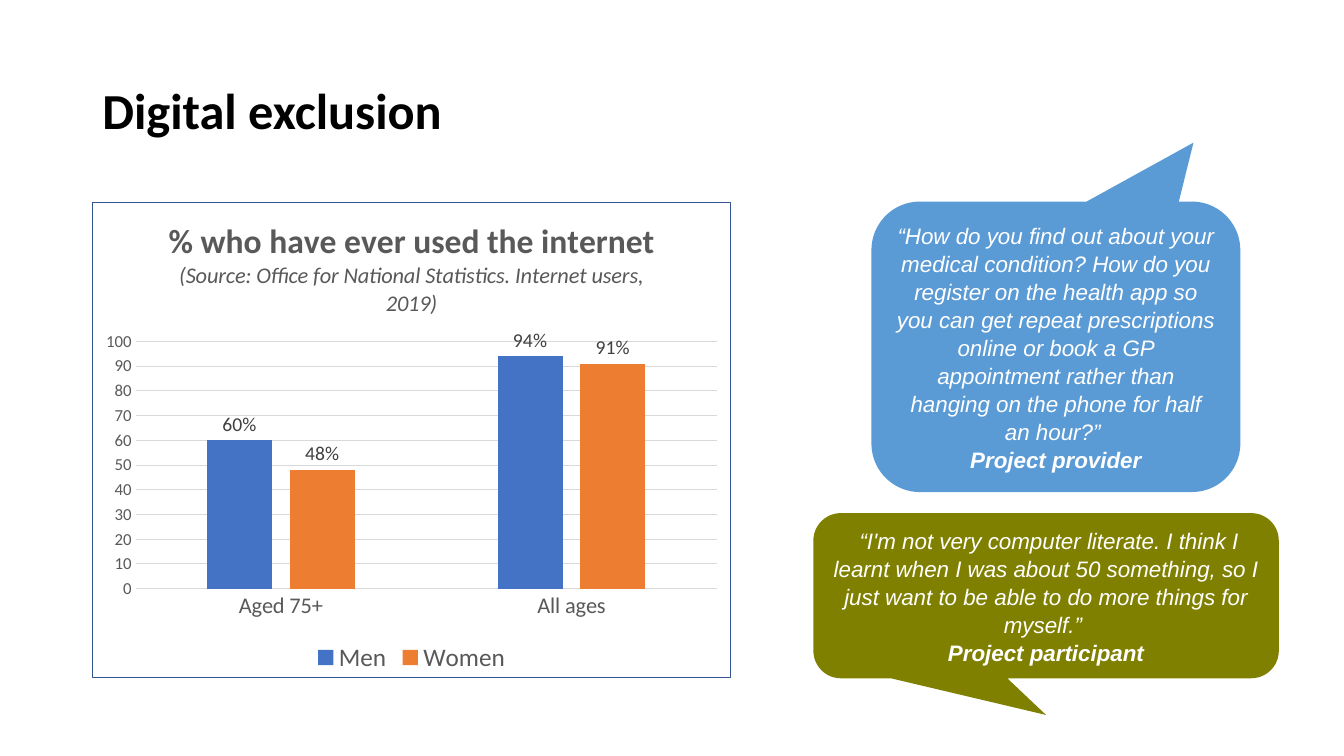
from lxml.etree import SubElement
from pptx import Presentation
from pptx.chart.data import CategoryChartData
from pptx.dml.color import RGBColor
from pptx.enum.chart import XL_CHART_TYPE, XL_LABEL_POSITION, XL_LEGEND_POSITION, XL_TICK_MARK
from pptx.enum.shapes import MSO_SHAPE
from pptx.enum.text import MSO_ANCHOR, PP_ALIGN
from pptx.oxml import parse_xml
from pptx.oxml.ns import nsdecls, qn
from pptx.util import Pt

COLOURS = {
    "ink": "000000", "grey": "595959", "label": "404040", "grid": "D9D9D9",
    "border": "325491", "men": "4472C4", "women": "ED7D31",
    "provider": "5B9BD5", "participant": "808000", "white": "FFFFFF",
}


def colour(name):
    return RGBColor.from_string(COLOURS[name])


def style_font(font, size, tint, face="Calibri", bold=False, italic=False):
    font.name, font.size, font.bold, font.italic = face, Pt(size), bold, italic
    font.color.rgb = colour(tint)


def write(paragraph, text, align=None, spacing=None, **format):
    paragraph.alignment = align
    paragraph.line_spacing = spacing
    run = paragraph.add_run()
    run.text = text
    style_font(run.font, **format)


class ExclusionSlide:
    quote_style = dict(size=16, tint="white", face="Arial', italic=True"[:5], italic=True,
                       align=PP_ALIGN.CENTER, spacing=Pt(20))

    def __init__(self, slide):
        self.shapes = slide.shapes

    def heading(self, text, left, top, width, height):
        frame = self.shapes.add_textbox(Pt(left), Pt(top), Pt(width), Pt(height)).text_frame
        frame.word_wrap = True
        frame.vertical_anchor = MSO_ANCHOR.MIDDLE
        write(frame.paragraphs[0], text, size=36, tint="ink", bold=True, spacing=0.9)

    def quote(self, words, speaker, left, top, width, height, fill, tail):
        bubble = self.shapes.add_shape(MSO_SHAPE.ROUNDED_RECTANGULAR_CALLOUT,
                                       Pt(left), Pt(top), Pt(width), Pt(height))
        bubble.shadow.inherit = False
        bubble.fill.solid()
        bubble.fill.fore_color.rgb = colour(fill)
        bubble.line.fill.background()
        bubble.adjustments[0], bubble.adjustments[1] = tail
        bubble.adjustments[2] = 0.167
        frame = bubble.text_frame
        frame.word_wrap = True
        frame.vertical_anchor = MSO_ANCHOR.MIDDLE
        write(frame.paragraphs[0], words, **self.quote_style)
        write(frame.add_paragraph(), speaker, bold=True, **self.quote_style)

    def usage_chart(self, title, source, ages, usage, left, top, width, height):
        data = CategoryChartData(number_format='0"%"')
        data.categories = ages
        for group, shares in usage.items():
            data.add_series(group, shares)
        chart = self.shapes.add_chart(XL_CHART_TYPE.COLUMN_CLUSTERED, Pt(left), Pt(top),
                                      Pt(width), Pt(height), data).chart
        style_font(chart.font, 10, "ink")
        heading = chart.chart_title.text_frame
        write(heading.paragraphs[0], title, size=24, tint="grey", bold=True)
        write(heading.add_paragraph(), source, size=16, tint="grey", italic=True)
        chart.chart_title.include_in_layout = False
        chart.has_legend = True
        chart.legend.position = XL_LEGEND_POSITION.BOTTOM
        chart.legend.include_in_layout = False
        style_font(chart.legend.font, 18, "grey")
        self.axes(chart)
        self.columns(chart.plots[0])
        self.frame_chart(chart, x=0.067, y=0.293, w=0.912, h=0.52)

    def axes(self, chart):
        age_axis, share_axis = chart.category_axis, chart.value_axis
        for axis, size in ((age_axis, 16), (share_axis, 12)):
            axis.major_tick_mark = axis.minor_tick_mark = XL_TICK_MARK.NONE
            style_font(axis.tick_labels.font, size, "grey")
        share_axis.minimum_scale, share_axis.maximum_scale = 0, 100
        share_axis.major_unit = 10
        share_axis.tick_labels.number_format = "0"
        share_axis.tick_labels.number_format_is_linked = False
        share_axis.format.line.fill.background()
        for line in (age_axis.format.line, share_axis.major_gridlines.format.line):
            line.color.rgb = colour("grid")
            line.width = Pt(0.75)

    def columns(self, plot):
        plot.gap_width, plot.overlap = 219, -27
        plot.vary_by_categories = False
        for series in plot.series:
            series.format.fill.solid()
            series.format.fill.fore_color.rgb = colour(series.name.lower())
            labels = series.data_labels
            labels.show_value = True
            labels.number_format = '0"%"'
            labels.number_format_is_linked = False
            labels.position = XL_LABEL_POSITION.OUTSIDE_END
            style_font(labels.font, 14, "label")

    def frame_chart(self, chart, **area):
        body = chart.element.find(qn("c:chart"))
        body.addnext(parse_xml(
            f'<c:spPr {nsdecls("c", "a")}><a:solidFill><a:srgbClr val="{COLOURS["white"]}"/>'
            f'</a:solidFill><a:ln w="{Pt(0.75)}"><a:solidFill>'
            f'<a:srgbClr val="{COLOURS["border"]}"/></a:solidFill></a:ln></c:spPr>'))
        plot_area = body.find(qn("c:plotArea"))
        for automatic in plot_area.findall(qn("c:layout")):
            plot_area.remove(automatic)
        layout = parse_xml(f'<c:layout {nsdecls("c")}><c:manualLayout/></c:layout>')
        settings = dict(layoutTarget="inner", xMode="edge", yMode="edge", **area)
        for name, value in settings.items():
            SubElement(layout[0], qn(f"c:{name}")).set("val", str(value))
        plot_area.insert(0, layout)


def main():
    deck = Presentation()
    deck.slide_width, deck.slide_height = Pt(960), Pt(540)
    page = ExclusionSlide(deck.slides.add_slide(deck.slide_layouts[6]))
    page.heading("Digital exclusion", 66, 29, 663, 104)
    page.usage_chart(
        "% who have ever used the internet",
        "(Source: Office for National Statistics. Internet users, 2019)",
        ["Aged 75+", "All ages"], {"Men": (60, 94), "Women": (48, 91)},
        66, 144, 456, 340.5)
    page.quote(
        "“How do you find out about your medical condition? How do you register on "
        "the health app so you can get repeat prescriptions online or book a GP "
        "appointment rather than hanging on the phone for half an hour?” ",
        "Project provider", 622.5, 144, 263.5, 207.5, "provider", (0.373, -0.703))
    page.quote(
        " “I'm not very computer literate. I think I learnt when I was about 50 "
        "something, so I just want to be able to do more things for myself.” ",
        "Project participant", 581, 366.5, 332.5, 118, "participant", (0, 0.722))
    deck.save("out.pptx")


if __name__ == "__main__":
    main()
